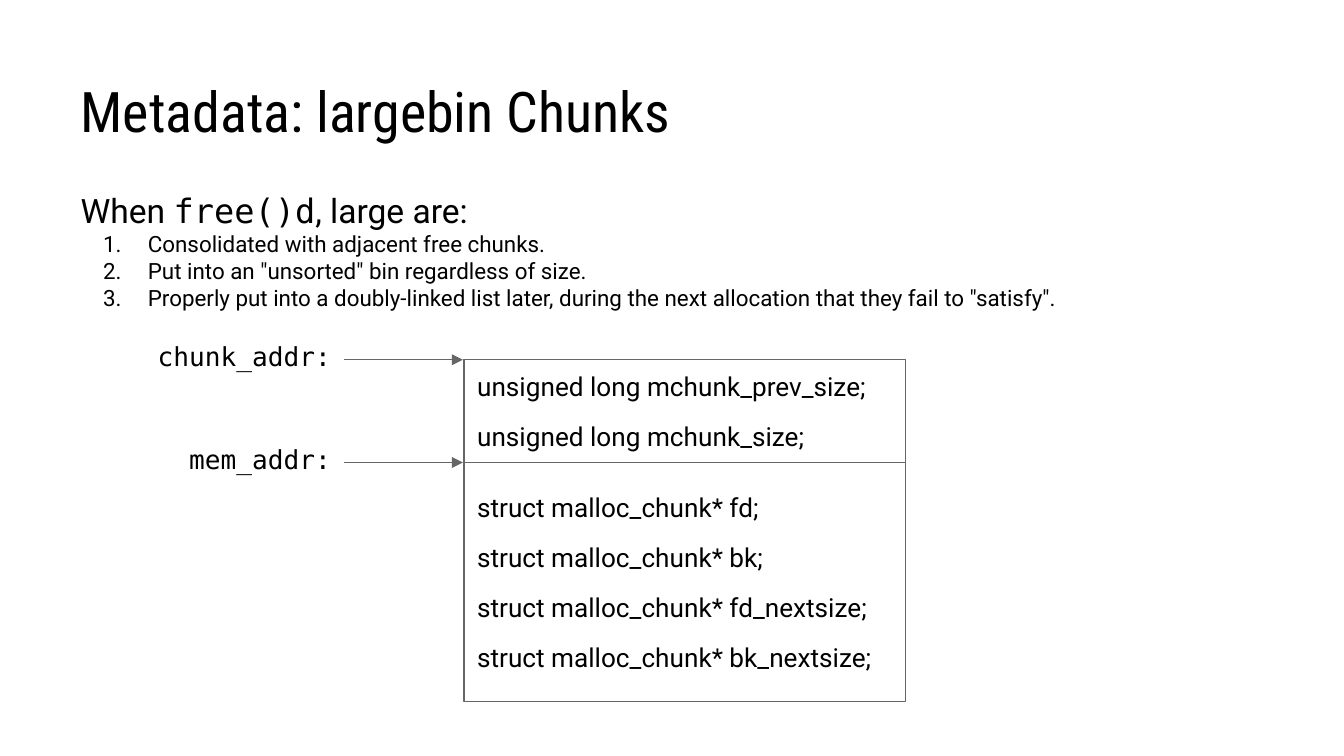
from lxml import etree
from pptx import Presentation
from pptx.dml.color import RGBColor
from pptx.enum import shapes, text
from pptx.oxml.ns import qn
from pptx.util import Pt

SANS, CONDENSED, MONO = "Roboto", "Roboto Condensed", "DejaVu Sans Mono"
BLACK, GRAY, WHITE = "000000", "666666", "FFFFFF"
INSET = 7.2


def color(value):
    return RGBColor.from_string(value)


def format_runs(paragraph, size, font_name):
    for run in paragraph.runs:
        run.font.size = Pt(size)
        run.font.name = font_name
        run.font.color.rgb = color(BLACK)


def place(shape, box):
    shape.left, shape.top, shape.width, shape.height = map(Pt, box)


def prepare_frame(shape, anchor):
    frame = shape.text_frame
    frame.word_wrap = True
    frame.auto_size = text.MSO_AUTO_SIZE.NONE
    frame.vertical_anchor = anchor
    frame.margin_left = frame.margin_right = Pt(INSET)
    frame.margin_top = frame.margin_bottom = Pt(INSET)
    return frame


def set_list_style(paragraph, numbered):
    properties = paragraph._p.get_or_add_pPr()
    properties.set("marL", str(Pt(36 if numbered else 0)))
    properties.set("indent", str(Pt(-24 if numbered else 0)))
    if numbered:
        font = etree.SubElement(properties, qn("a:buFont"))
        font.set("typeface", SANS)
        bullet = etree.SubElement(properties, qn("a:buAutoNum"))
        bullet.set("type", "arabicPeriod")
    else:
        etree.SubElement(properties, qn("a:buNone"))


def add_title(slide, box, title):
    shape = slide.shapes.title
    place(shape, box)
    frame = prepare_frame(shape, text.MSO_ANCHOR.BOTTOM)
    frame.text = title
    frame.paragraphs[0].alignment = text.PP_ALIGN.LEFT
    format_runs(frame.paragraphs[0], 30, CONDENSED)


def add_body(slide, box, lead, steps):
    shape = slide.placeholders[1]
    place(shape, box)
    frame = prepare_frame(shape, text.MSO_ANCHOR.TOP)

    # Lead sentence with inline code
    paragraph = frame.paragraphs[0]
    paragraph.space_before = Pt(0)
    set_list_style(paragraph, numbered=False)
    for words, _ in lead:
        paragraph.add_run().text = words
    format_runs(paragraph, 18, SANS)
    for run, (_, font_name) in zip(paragraph.runs, lead):
        run.font.name = font_name

    # Numbered steps
    for step in steps:
        paragraph = frame.add_paragraph()
        paragraph.text = step
        paragraph.space_before = Pt(0)
        set_list_style(paragraph, numbered=True)
        format_runs(paragraph, 12, SANS)


def add_field_block(slide, box, fields):
    shape = slide.shapes.add_shape(shapes.MSO_SHAPE.RECTANGLE, *map(Pt, box))
    shape.shadow.inherit = False
    shape.fill.solid()
    shape.fill.fore_color.rgb = color(WHITE)
    shape.line.color.rgb = color(GRAY)
    shape.line.width = Pt(0.75)
    frame = prepare_frame(shape, text.MSO_ANCHOR.MIDDLE)
    frame.text = "\n".join(fields)
    for index, paragraph in enumerate(frame.paragraphs):
        paragraph.alignment = text.PP_ALIGN.LEFT
        paragraph.space_before = Pt(10 if index else 0)
        format_runs(paragraph, 14, SANS)


def add_pointer(slide, box, label, arrow_end):
    left, top, width, height = box

    # Arrow to the top edge of a block
    start, y = left + width, top + height / 2
    arrow = slide.shapes.add_connector(
        shapes.MSO_CONNECTOR.STRAIGHT, Pt(start), Pt(y), Pt(arrow_end), Pt(y))
    arrow.line.color.rgb = color(GRAY)
    arrow.line.width = Pt(0.75)
    head = etree.SubElement(arrow.line._get_or_add_ln(), qn("a:tailEnd"))
    head.set("type", "triangle")
    etree.SubElement(arrow._element.spPr, qn("a:effectLst"))

    # Address label
    label_box = slide.shapes.add_textbox(*map(Pt, box))
    frame = prepare_frame(label_box, text.MSO_ANCHOR.TOP)
    frame.text = label
    frame.paragraphs[0].alignment = text.PP_ALIGN.RIGHT
    format_runs(frame.paragraphs[0], 14, MONO)


def add_chunk_diagram(slide, box, blocks):
    left, top, width, _ = box
    label_left, label_width, label_height = 67, 117.5, 35
    for label, height, fields in blocks:
        add_field_block(slide, (left, top, width, height), fields)
        label_box = (label_left, top - label_height / 2, label_width, label_height)
        add_pointer(slide, label_box, label, left - 0.5)
        top += height


def main():
    presentation = Presentation()
    presentation.slide_width, presentation.slide_height = Pt(720), Pt(405)
    slide = presentation.slides.add_slide(presentation.slide_layouts[1])

    add_title(slide, (36, 16.5, 648, 67.5), "Metadata: largebin Chunks")
    add_body(
        slide, (36, 94.5, 648, 293),
        [("When ", SANS), ("free()d", MONO), (", large are:", SANS)],
        ["Consolidated with adjacent free chunks.",
         'Put into an "unsorted" bin regardless of size.',
         "Properly put into a doubly-linked list later, during the next "
         'allocation that they fail to "satisfy".'])
    add_chunk_diagram(slide, (248.5, 192.75, 236.5, 183), [
        ("chunk_addr:", 55,
         ["unsigned long mchunk_prev_size;", "unsigned long mchunk_size;"]),
        ("mem_addr:", 128,
         [f"struct malloc_chunk* {name};"
          for name in ("fd", "bk", "fd_nextsize", "bk_nextsize")]),
    ])
    presentation.save("out.pptx")


if __name__ == "__main__":
    main()
